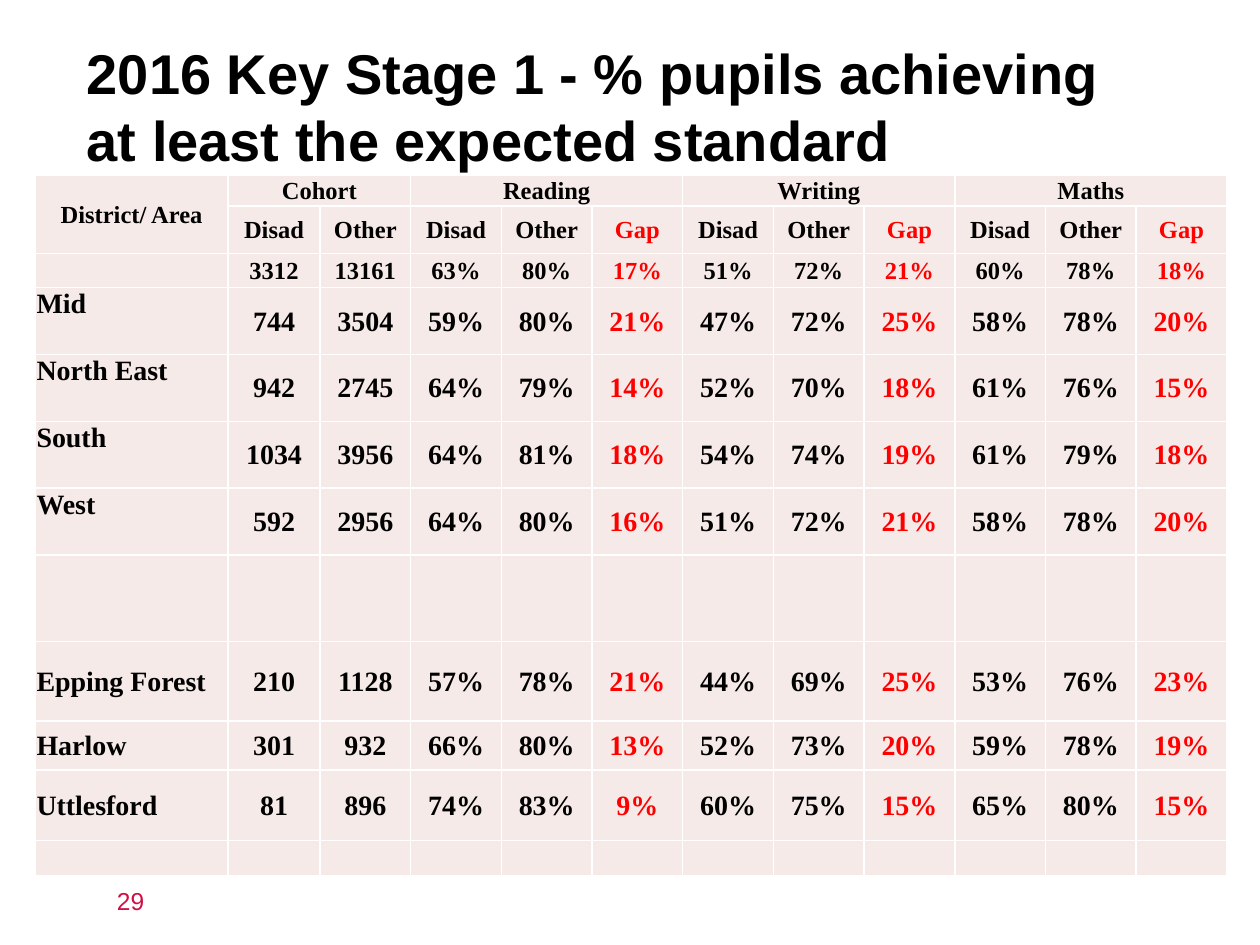
import lxml.etree
import pptx
import pptx.dml.color
import pptx.enum.text
import pptx.oxml.ns
import pptx.util

Inches = pptx.util.Inches
ANCHOR = pptx.enum.text.MSO_ANCHOR
ALIGN = pptx.enum.text.PP_ALIGN

THEME = {
    "title_font": "Arial", "table_font": "Times New Roman",
    "text": "000000", "gap": "FF0000", "page": "D00F44",
    "cell": "F5EAE7", "border": "FFFFFF",
    "title_size": 32, "heading_size": 14, "body_size": 16, "page_size": 14,
}

TITLE = "2016 Key Stage 1 - % pupils achieving at least the expected standard"
PAGE_NUMBER = "29"
CORNER = "District/ Area"
GROUPS = [
    ("Cohort", ["Disad", "Other"]),
    ("Reading", ["Disad", "Other", "Gap"]),
    ("Writing", ["Disad", "Other", "Gap"]),
    ("Maths", ["Disad", "Other", "Gap"]),
]
# Area, cohort sizes, then percentages in the order of GROUPS; None is a blank row
AREAS = [
    ("", [3312, 13161], [63, 80, 17, 51, 72, 21, 60, 78, 18]),
    ("Mid", [744, 3504], [59, 80, 21, 47, 72, 25, 58, 78, 20]),
    ("North East", [942, 2745], [64, 79, 14, 52, 70, 18, 61, 76, 15]),
    ("South", [1034, 3956], [64, 81, 18, 54, 74, 19, 61, 79, 18]),
    ("West", [592, 2956], [64, 80, 16, 51, 72, 21, 58, 78, 20]),
    None,
    ("Epping Forest", [210, 1128], [57, 78, 21, 44, 69, 25, 53, 76, 23]),
    ("Harlow", [301, 932], [66, 80, 13, 52, 73, 20, 59, 78, 19]),
    ("Uttlesford", [81, 896], [74, 83, 9, 60, 75, 15, 65, 80, 15]),
    None,
]
QUADRANTS = {"Mid", "North East", "South", "West"}

MEASURES = [measure for _, measures in GROUPS for measure in measures]
COLUMN_WIDTHS = [1.53, 0.73] + [0.72] * (len(MEASURES) - 1)
ROW_HEIGHTS = [0.22, 0.38, 0.27] + [0.53] * 4 + [0.69, 0.63, 0.39, 0.56, 0.28]


def rgb(name):
    return pptx.dml.color.RGBColor.from_string(THEME[name])


def add_run(paragraph, text, font, size, color, bold=False):
    run = paragraph.add_run()
    run.text = text
    run.font.name = THEME[font]
    run.font.size = pptx.util.Pt(THEME[size])
    run.font.color.rgb = rgb(color)
    run.font.bold = bold


def add_label(slide, box, anchor, *run_style, **run_options):
    frame = slide.shapes.add_textbox(*map(Inches, box)).text_frame
    frame.word_wrap = True
    frame.vertical_anchor = anchor
    add_run(frame.paragraphs[0], *run_style, **run_options)


def add_borders(cell):
    """Put a thin line on all four sides; lines must precede the fill."""
    properties = cell._tc.get_or_add_tcPr()
    for position, side in enumerate(("lnL", "lnR", "lnT", "lnB")):
        line = lxml.etree.Element(pptx.oxml.ns.qn(f"a:{side}"), w=str(pptx.util.Pt(1)))
        fill = lxml.etree.SubElement(line, pptx.oxml.ns.qn("a:solidFill"))
        lxml.etree.SubElement(fill, pptx.oxml.ns.qn("a:srgbClr"), val=THEME["border"])
        properties.insert(position, line)


def style_cell(cell):
    cell.margin_left = cell.margin_right = cell.margin_top = Inches(0.01)
    cell.margin_bottom = 0
    cell.vertical_anchor = ANCHOR.MIDDLE
    cell.fill.solid()
    cell.fill.fore_color.rgb = rgb("cell")
    add_borders(cell)
    # An empty cell would otherwise stretch its row to the default type size
    end = cell.text_frame.paragraphs[0]._p.get_or_add_endParaRPr()
    end.set("sz", str(THEME["heading_size"] * 100))


def write_cell(cell, text, size, color="text", align=ALIGN.CENTER):
    if text:
        paragraph = cell.text_frame.paragraphs[0]
        paragraph.alignment = align
        add_run(paragraph, text, "table_font", size, color, bold=True)


def write_headings(table):
    table.cell(0, 0).merge(table.cell(1, 0))
    write_cell(table.cell(0, 0), CORNER, "heading_size")
    column = 1
    for group, measures in GROUPS:
        table.cell(0, column).merge(table.cell(0, column + len(measures) - 1))
        write_cell(table.cell(0, column), group, "heading_size")
        column += len(measures)
    write_measures(table, 1, MEASURES, "heading_size")


def write_measures(table, row, values, size):
    for column, (measure, value) in enumerate(zip(MEASURES, values), start=1):
        color = "gap" if measure == "Gap" else "text"
        write_cell(table.cell(row, column), value, size, color)


def write_areas(table):
    for row, area in enumerate(AREAS, start=2):
        if area is None:
            continue
        name, cohort, percentages = area
        size = "body_size" if name else "heading_size"
        write_cell(table.cell(row, 0), name, size, align=ALIGN.LEFT)
        if name in QUADRANTS:
            table.cell(row, 0).vertical_anchor = ANCHOR.TOP
        values = [str(count) for count in cohort] + [f"{value}%" for value in percentages]
        write_measures(table, row, values, size)


def add_results(slide):
    table = slide.shapes.add_table(
        len(ROW_HEIGHTS), len(COLUMN_WIDTHS), Inches(0.28), Inches(1.39),
        Inches(sum(COLUMN_WIDTHS)), Inches(sum(ROW_HEIGHTS))).table
    table.first_row = table.horz_banding = False
    for column, width in zip(table.columns, COLUMN_WIDTHS):
        column.width = Inches(width)
    for row, height in zip(table.rows, ROW_HEIGHTS):
        row.height = Inches(height)
    for cell in table.iter_cells():
        style_cell(cell)
    write_headings(table)
    write_areas(table)


def main():
    deck = pptx.Presentation()
    deck.slide_width, deck.slide_height = Inches(10), Inches(7.5)
    slide = deck.slides.add_slide(deck.slide_layouts[6])
    add_label(slide, (0.59, 0.21, 8.58, 1.25), ANCHOR.MIDDLE,
              TITLE, "title_font", "title_size", "text", bold=True)
    add_results(slide)
    add_label(slide, (0.83, 6.98, 2.08, 0.33), ANCHOR.TOP,
              PAGE_NUMBER, "title_font", "page_size", "page")
    deck.save("out.pptx")


if __name__ == "__main__":
    main()
